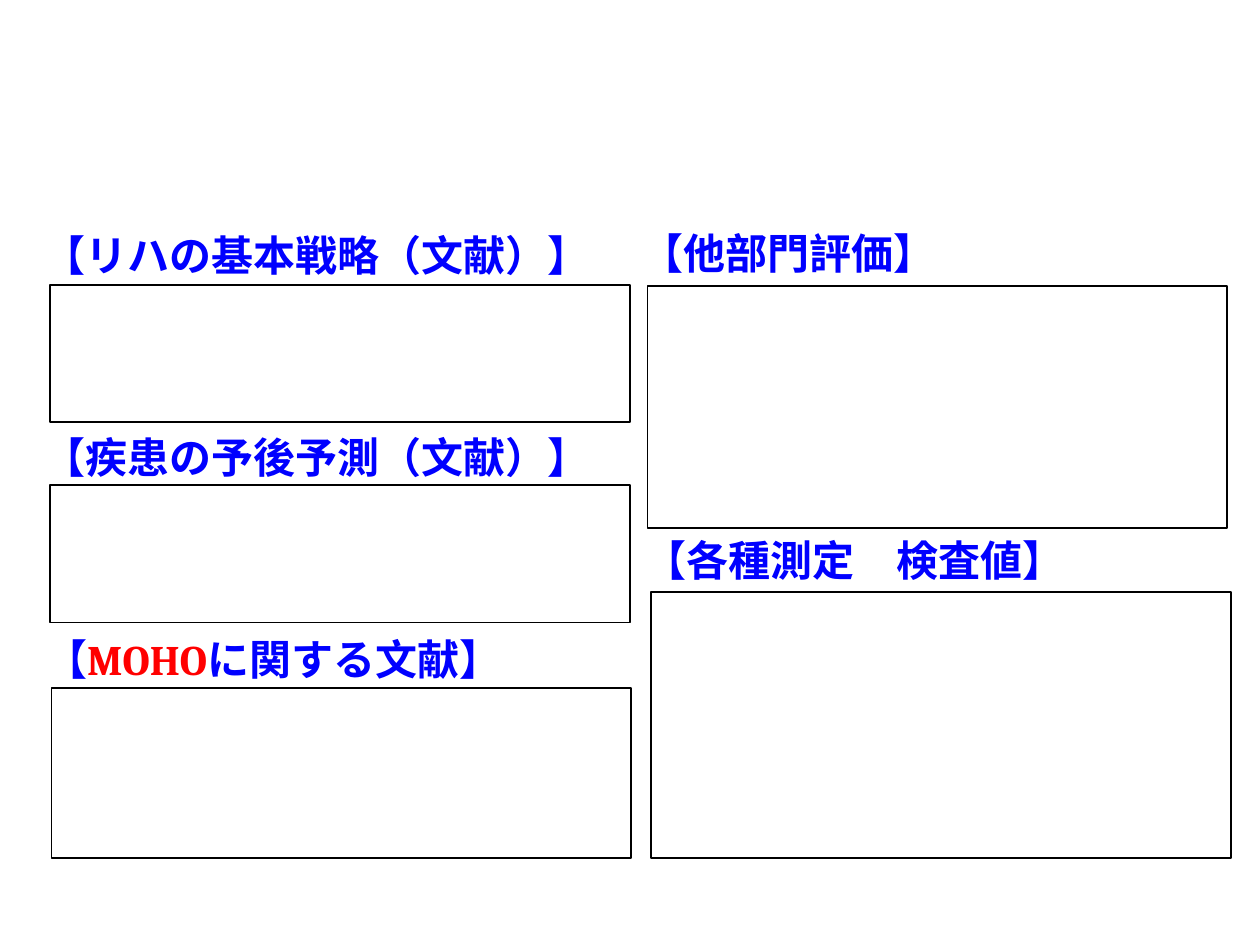
from dataclasses import dataclass

from pptx import Presentation, util as u
from pptx.dml.color import RGBColor
from pptx.enum import shapes, text

Pt = u.Pt


@dataclass(frozen=True)
class Theme:
    font: str = "Cambria"
    heading_size: int = 24
    heading: RGBColor = RGBColor(0x00, 0x00, 0xFF)
    accent: RGBColor = RGBColor(0xFF, 0x00, 0x00)
    paper: RGBColor = RGBColor(0xFF, 0xFF, 0xFF)
    outline: RGBColor = RGBColor(0x00, 0x00, 0x00)
    outline_width: int = 1


THEME = Theme()
FRAME_WIDTH = 331.2
HEADING_HEIGHT = 36
HEADING_OUTDENT = 10.8


def add_run(paragraph, content, *, color=THEME.heading, size=THEME.heading_size, bold=True):
    run = paragraph.add_run()
    run.text = content
    run.font.name = THEME.font
    run.font.size = Pt(size)
    run.font.bold = bold
    run.font.color.rgb = color


def add_section(slide, runs, left, top, height, heading_gap=HEADING_HEIGHT):
    """Place an empty answer frame at left, top with its heading above."""
    # Heading
    heading = slide.shapes.add_textbox(
        Pt(left - HEADING_OUTDENT), Pt(top - heading_gap), Pt(FRAME_WIDTH), Pt(HEADING_HEIGHT))
    frame = heading.text_frame
    frame.word_wrap = True
    frame.auto_size = text.MSO_AUTO_SIZE.SHAPE_TO_FIT_TEXT
    for content, color in runs:
        add_run(frame.paragraphs[0], content, color=color)

    # Answer frame
    shape = slide.shapes.add_shape(
        shapes.MSO_SHAPE.RECTANGLE, Pt(left), Pt(top), Pt(FRAME_WIDTH), Pt(height))
    shape.shadow.inherit = False
    shape.fill.solid()
    shape.fill.fore_color.rgb = THEME.paper
    shape.line.color.rgb = THEME.outline
    shape.line.width = Pt(THEME.outline_width)


def add_literature_column(slide, left, top):
    blue, red = THEME.heading, THEME.accent
    add_section(slide, [("【リハの基本戦略（文献）】", blue)], left, top, 78.5, 35.3)
    add_section(slide, [("【疾患の予後予測（文献）】", blue)], left, top + 114.5, 78.5, 34.4)
    add_section(slide, [("【", blue), ("MOHO", red), ("に関する文献】", blue)],
                left + 0.7, top + 230.4, 97.2, 34.9)


def add_assessment_column(slide, left, top):
    blue = THEME.heading
    add_section(slide, [("【他部門評価】", blue)], left, top, 138.2, 36.7)
    add_section(slide, [("【各種測定　検査値】", blue)], left + 2.1, top + 175, 151.9, 36.7)


def main():
    presentation = Presentation()
    presentation.slide_width, presentation.slide_height = Pt(720), Pt(540)
    slide = presentation.slides.add_slide(presentation.slide_layouts[6])
    add_literature_column(slide, 28.8, 162.7)
    add_assessment_column(slide, 370.1, 163.4)
    presentation.save("out.pptx")


if __name__ == "__main__":
    main()
